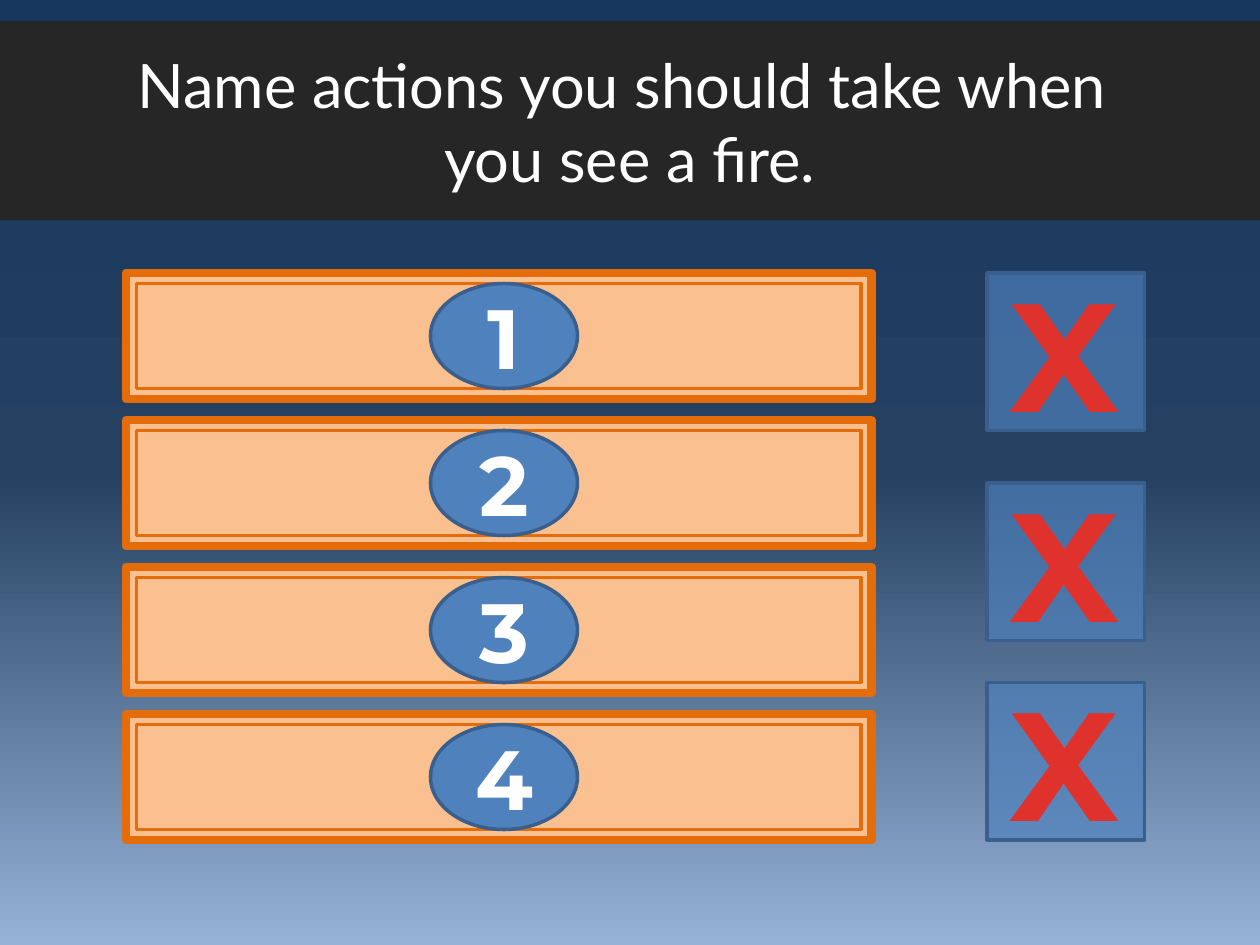
"""Build a survey game slide with four numbered answers and three strikes."""
import pptx
import pptx.util
import pptx.dml.color
import pptx.enum.shapes
import pptx.enum.text
import pptx.oxml.ns
from lxml import etree

EMU_PER_PX = 9525
WIDTH, HEIGHT = 960, 720
COLORS = {
    "navy": "17375E", "slate": "254061", "sky": "95B3D7", "band": "262626",
    "white": "FFFFFF", "peach": "FAC090", "orange": "E46C0A",
    "blue": "4F81BD", "edge": "3A5F8C", "red": "E0322D", "dark_red": "A2201C",
}
RECT = pptx.enum.shapes.MSO_SHAPE.RECTANGLE
OVAL = pptx.enum.shapes.MSO_SHAPE.OVAL
AUTO = pptx.enum.text.MSO_AUTO_SIZE
TITLE_FONT = {"name": "Lato", "size": pptx.util.Pt(35), "bold": False}
NUMBER_FONT = {"name": "Montserrat", "size": pptx.util.Pt(48), "bold": True}
STRIKE_FONT = {"name": "Montserrat", "size": pptx.util.Pt(88), "bold": True}
QUESTION = ["Name actions you should take when ", "you see a fire."]
CARD_TOP, CARD_STEP, CARD_COUNT = 208, 112, 4
STRIKE_TOPS = [208, 368, 520]


def px(*lengths):
    """Turn pixel lengths into EMU."""
    return [length * EMU_PER_PX for length in lengths]


def rgb(name):
    """Look up a named colour."""
    return pptx.dml.color.RGBColor.from_string(COLORS[name])


def set_solid(fill, color, alpha=None):
    """Give a solid fill, with an optional opacity in percent."""
    fill.solid()
    fill.fore_color.rgb = rgb(color)


def set_gradient(sp, fill, stops):
    """Give a downward gradient with the listed position and colour stops."""
    qn = pptx.oxml.ns.qn
    fill.gradient()
    fill.gradient_angle = 270
    gs_list = sp.element.find(".//" + qn("a:gsLst"))
    for gs in list(gs_list):
        gs_list.remove(gs)
    for position, color in stops:
        gs = etree.SubElement(gs_list, qn("a:gs"), pos=str(position * 1000))
        etree.SubElement(gs, qn("a:srgbClr"), val=COLORS[color])


def set_opacity(sp, percent):
    """Make the solid fill of a shape partly transparent."""
    qn = pptx.oxml.ns.qn
    color = sp.element.spPr.find(qn("a:solidFill")).find(qn("a:srgbClr"))
    etree.SubElement(color, qn("a:alpha"), val=str(percent * 1000))


def add_box(shapes, kind, box, fill=None, line=None, weight=2):
    """Add a preset shape without a shadow."""
    sp = shapes.add_shape(kind, *px(*box))
    sp.shadow.inherit = False
    if fill:
        set_solid(sp.fill, fill)
    if line:
        sp.line.color.rgb = rgb(line)
        sp.line.width = pptx.util.Pt(weight)
    else:
        sp.line.fill.background()
    return sp


def write(tf, lines, font, color="white"):
    """Write centred paragraphs and return their last run."""
    for i, line in enumerate(lines):
        p = tf.add_paragraph() if i else tf.paragraphs[0]
        p.alignment = pptx.enum.text.PP_ALIGN.CENTER
        r = p.add_run()
        r.text = line
        for name, value in font.items():
            setattr(r.font, name, value)
        r.font.color.rgb = rgb(color)
    return r


def add_backdrop(s):
    """Cover the slide with the blue gradient."""
    sp = add_box(s.shapes, RECT, (0, 0, WIDTH, HEIGHT))
    set_gradient(sp, sp.fill, [(0, "navy"), (50, "slate"), (100, "sky")])


def format_title(s):
    """Turn the title placeholder into the question band above the backdrop."""
    title = s.shapes.title
    title.element.getparent().append(title.element)
    title.left, title.top, title.width, title.height = px(0, 16, WIDTH, 152)
    set_solid(title.fill, "band")
    tf = title.text_frame
    tf.auto_size = AUTO.NONE
    tf.word_wrap = True
    tf.vertical_anchor = pptx.enum.text.MSO_ANCHOR.MIDDLE
    write(tf, QUESTION, TITLE_FONT)


def add_answer(s, number):
    """Add a grouped answer card with its number."""
    top = CARD_TOP + (number - 1) * CARD_STEP
    shapes = s.shapes.add_group_shape().shapes
    add_box(shapes, RECT, (96, top, 568, 96), "peach", "orange", 5)
    add_box(shapes, RECT, (104, top + 8, 552, 80), "peach", "orange")
    sp = add_box(shapes, OVAL, (328, top + 8, 112, 80), "blue", "edge")
    write(sp.text_frame, [str(number)], NUMBER_FONT)


def add_strike(s, top):
    """Add a translucent square with a red X."""
    square = add_box(s.shapes, RECT, (752, top, 120, 120), "blue", "edge")
    set_opacity(square, 69)
    sp = s.shapes.add_textbox(*px(760, top - 16, 102, 152))
    tf = sp.text_frame
    tf.word_wrap = False
    tf.auto_size = AUTO.SHAPE_TO_FIT_TEXT
    r = write(tf, ["X"], STRIKE_FONT, "red")
    set_gradient(sp, r.font.fill, [(25, "red"), (100, "dark_red")])
    sp.element.find(".//" + pptx.oxml.ns.qn("a:rPr")).set("spc", "50")


def main():
    """Build and save the slide."""
    prs = pptx.Presentation()
    prs.slide_width, prs.slide_height = px(WIDTH, HEIGHT)
    s = prs.slides.add_slide(prs.slide_layouts[5])
    add_backdrop(s)
    format_title(s)
    for number in range(CARD_COUNT, 0, -1):
        add_answer(s, number)
    for top in STRIKE_TOPS:
        add_strike(s, top)
    prs.save("out.pptx")


if __name__ == "__main__":
    main()
